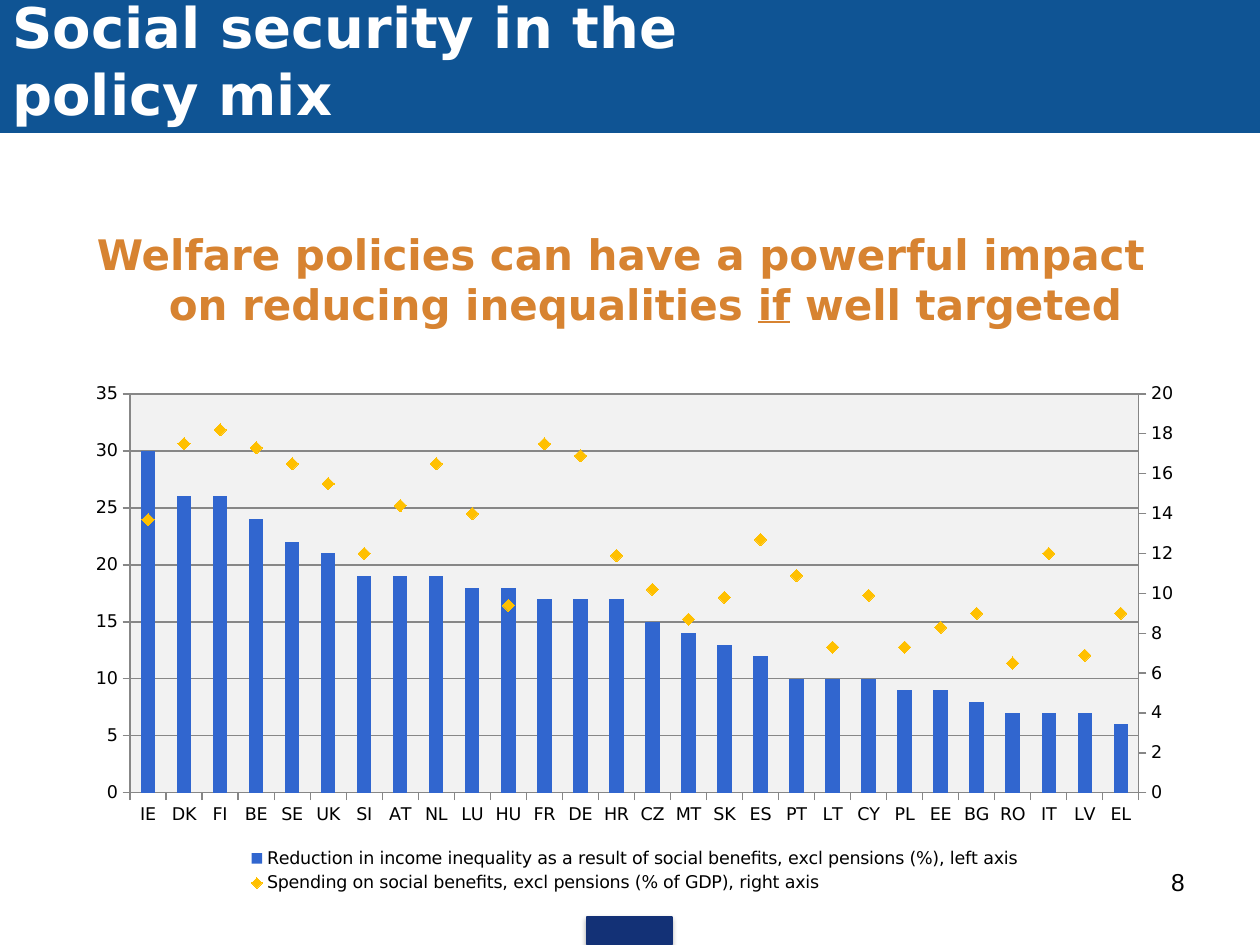
import pptx
import pptx.chart.axis
import pptx.chart.data
import pptx.dml.color
import pptx.enum.chart
import pptx.enum.shapes
import pptx.enum.text
import pptx.oxml
import pptx.oxml.ns
import pptx.util

PX = 7257  # EMU per px, 126 px to the inch
FONT = "DejaVu Sans"
ALIGN = pptx.enum.text.PP_ALIGN


def rgb(value):
    return pptx.dml.color.RGBColor.from_string(value)


def add_text(paragraph, text, size=24, color="000000", font=FONT, bold=False, underline=False):
    run = paragraph.add_run()
    run.text = text
    run.font.name = font
    run.font.size = pptx.util.Pt(size)
    run.font.bold = bold
    run.font.underline = underline
    run.font.color.rgb = rgb(color)


deck = pptx.Presentation()
deck.slide_width = pptx.util.Inches(10)
deck.slide_height = pptx.util.Inches(7.5)
slide = deck.slides.add_slide(deck.slide_layouts[5])

# Header band and footer block
bands = []
for left, top, width, height, color in [
    (0, 0, 1260, 132, "0F5494"),
    (587, 917, 85, 28, "133176"),
]:
    band = slide.shapes.add_shape(pptx.enum.shapes.MSO_SHAPE.RECTANGLE,
                                  left * PX, top * PX, width * PX, height * PX)
    band.shadow.inherit = False
    band.fill.solid()
    band.fill.fore_color.rgb = rgb(color)
    band.line.color.rgb = rgb(color)
    band.line.width = pptx.util.Pt(0.75)
    bands.append(band)

footer_effects = bands[1]._element.spPr.find(pptx.oxml.ns.qn("a:effectLst"))
footer_effects.append(pptx.oxml.parse_xml(
    f'<a:outerShdw {pptx.oxml.ns.nsdecls("a")} blurRad="39370" dist="22860" dir="5400000" rotWithShape="0">'
    '<a:srgbClr val="000000"><a:alpha val="35000"/></a:srgbClr></a:outerShdw>'))

# Message in the title placeholder
message = slide.shapes.title
message.left, message.top, message.width, message.height = 54 * PX, 214 * PX, 1134 * PX, 129 * PX
message.text_frame.word_wrap = True
message.text_frame.auto_size = pptx.enum.text.MSO_AUTO_SIZE.NONE
message.text_frame.vertical_anchor = pptx.enum.text.MSO_ANCHOR.MIDDLE
message_line = message.text_frame.paragraphs[0]
message_line.alignment = ALIGN.CENTER
hanging = message_line._p.get_or_add_pPr()
hanging.set("marL", str(49 * PX))
hanging.set("indent", str(-49 * PX))
for text, underline in [
    ("Welfare policies can have a powerful impact on reducing inequalities ", False),
    ("if", True),
    (" well targeted", False),
]:
    add_text(message_line, text, color="D78331", bold=True, underline=underline)

# Section heading and page number
for text, (left, top, width, height), align, style in [
    ("8", (903, 861, 294, 66), ALIGN.RIGHT, dict(size=14, font="Arial")),
    ("Social security in the policy mix", (0, -14, 714, 149), ALIGN.LEFT,
     dict(size=32, color="FFFFFF", bold=True)),
]:
    box = slide.shapes.add_textbox(left * PX, top * PX, width * PX, height * PX)
    box.text_frame.word_wrap = True
    box.text_frame.paragraphs[0].alignment = align
    add_text(box.text_frame.paragraphs[0], text, **style)

# Chart data
countries = ("IE DK FI BE SE UK SI AT NL LU HU FR DE HR CZ MT SK ES "
             "PT LT CY PL EE BG RO IT LV EL").split()
reduction = [30, 26, 26, 24, 22, 21, 19, 19, 19, 18, 18, 17, 17, 17,
             15, 14, 13, 12, 10, 10, 10, 9, 9, 8, 7, 7, 7, 6]
spending = [13.7, 17.5, 18.2, 17.3, 16.5, 15.5, 12, 14.4, 16.5, 14, 9.4, 17.5, 16.9, 11.9,
            10.2, 8.7, 9.8, 12.7, 10.9, 7.3, 9.9, 7.3, 8.3, 9, 6.5, 12, 6.9, 9]
data = pptx.chart.data.CategoryChartData()
data.categories = countries
data.add_series("Reduction in income inequality as a result of social benefits, "
                "excl pensions (%), left axis", reduction)
data.add_series("Spending on social benefits, excl pensions (% of GDP), right axis", spending)
chart = slide.shapes.add_chart(pptx.enum.chart.XL_CHART_TYPE.COLUMN_CLUSTERED,
                               74 * PX, 373 * PX, 1121 * PX, 525 * PX, data).chart
chart.has_title = False
chart.font.name = FONT
chart.font.size = pptx.util.Pt(10)
chart.font.color.rgb = rgb("000000")
chart.has_legend = True
chart.legend.position = pptx.enum.chart.XL_LEGEND_POSITION.BOTTOM
chart.legend.include_in_layout = False

# Move spending to markers on a right axis
NS = pptx.oxml.ns.nsdecls("c", "a")
plot_area = chart._chartSpace.chart.plotArea
spending_ser = chart.plots[0].series[1]._element
for inverted in spending_ser.findall(pptx.oxml.ns.qn("c:invertIfNegative")):
    spending_ser.remove(inverted)
line_chart = pptx.oxml.parse_xml(
    f'<c:lineChart {NS}><c:grouping val="standard"/><c:varyColors val="0"/>'
    '<c:marker val="1"/><c:axId val="5001"/><c:axId val="5002"/></c:lineChart>')
line_chart.insert(2, spending_ser)
plot_area.find(pptx.oxml.ns.qn("c:barChart")).addnext(line_chart)
hidden_axis = pptx.oxml.parse_xml(
    f'<c:catAx {NS}><c:axId val="5001"/><c:scaling><c:orientation val="minMax"/></c:scaling>'
    '<c:delete val="1"/><c:axPos val="b"/><c:crossAx val="5002"/></c:catAx>')
right_axis = pptx.oxml.parse_xml(
    f'<c:valAx {NS}><c:axId val="5002"/><c:scaling><c:orientation val="minMax"/></c:scaling>'
    '<c:delete val="0"/><c:axPos val="r"/><c:numFmt formatCode="General" sourceLinked="0"/>'
    '<c:majorTickMark val="out"/><c:minorTickMark val="none"/><c:tickLblPos val="nextTo"/>'
    '<c:crossAx val="5001"/><c:crosses val="max"/></c:valAx>')
chart.value_axis._element.addnext(hidden_axis)
hidden_axis.addnext(right_axis)

# Plot area position and fill
for layout in plot_area.findall(pptx.oxml.ns.qn("c:layout")):
    plot_area.remove(layout)
plot_area.insert(0, pptx.oxml.parse_xml(
    f'<c:layout {NS}><c:manualLayout><c:layoutTarget val="inner"/>'
    '<c:xMode val="edge"/><c:yMode val="edge"/>'
    '<c:x val="0.05"/><c:y val="0.04"/><c:w val="0.9"/><c:h val="0.76"/>'
    '</c:manualLayout></c:layout>'))
plot_area.append(pptx.oxml.parse_xml(
    f'<c:spPr {NS}><a:solidFill><a:srgbClr val="F2F2F2"/></a:solidFill></c:spPr>'))

# Axes
spending_axis = pptx.chart.axis.ValueAxis(right_axis)
for axis, top, step in [(chart.value_axis, 35, 5), (spending_axis, 20, 2)]:
    axis.minimum_scale = 0
    axis.maximum_scale = top
    axis.major_unit = step
for axis in (chart.category_axis, chart.value_axis, spending_axis):
    axis.major_tick_mark = pptx.enum.chart.XL_TICK_MARK.OUTSIDE
    axis.format.line.color.rgb = rgb("868686")
    axis.format.line.width = pptx.util.Pt(0.75)
chart.value_axis.has_major_gridlines = True
chart.value_axis.major_gridlines.format.line.color.rgb = rgb("868686")
chart.value_axis.major_gridlines.format.line.width = pptx.util.Pt(0.75)

# Series formats
columns, markers = chart.plots
columns.gap_width = 150
columns.vary_by_categories = False
columns.series[0].format.fill.solid()
columns.series[0].format.fill.fore_color.rgb = rgb("3166CF")
diamonds = markers.series[0]
diamonds.smooth = False
diamonds.format.line.fill.background()
diamonds.marker.style = pptx.enum.chart.XL_MARKER_STYLE.DIAMOND
diamonds.marker.size = 7
diamonds.marker.format.fill.solid()
diamonds.marker.format.fill.fore_color.rgb = rgb("FFC000")
diamonds.marker.format.line.color.rgb = rgb("FFC000")

deck.save("out.pptx")
